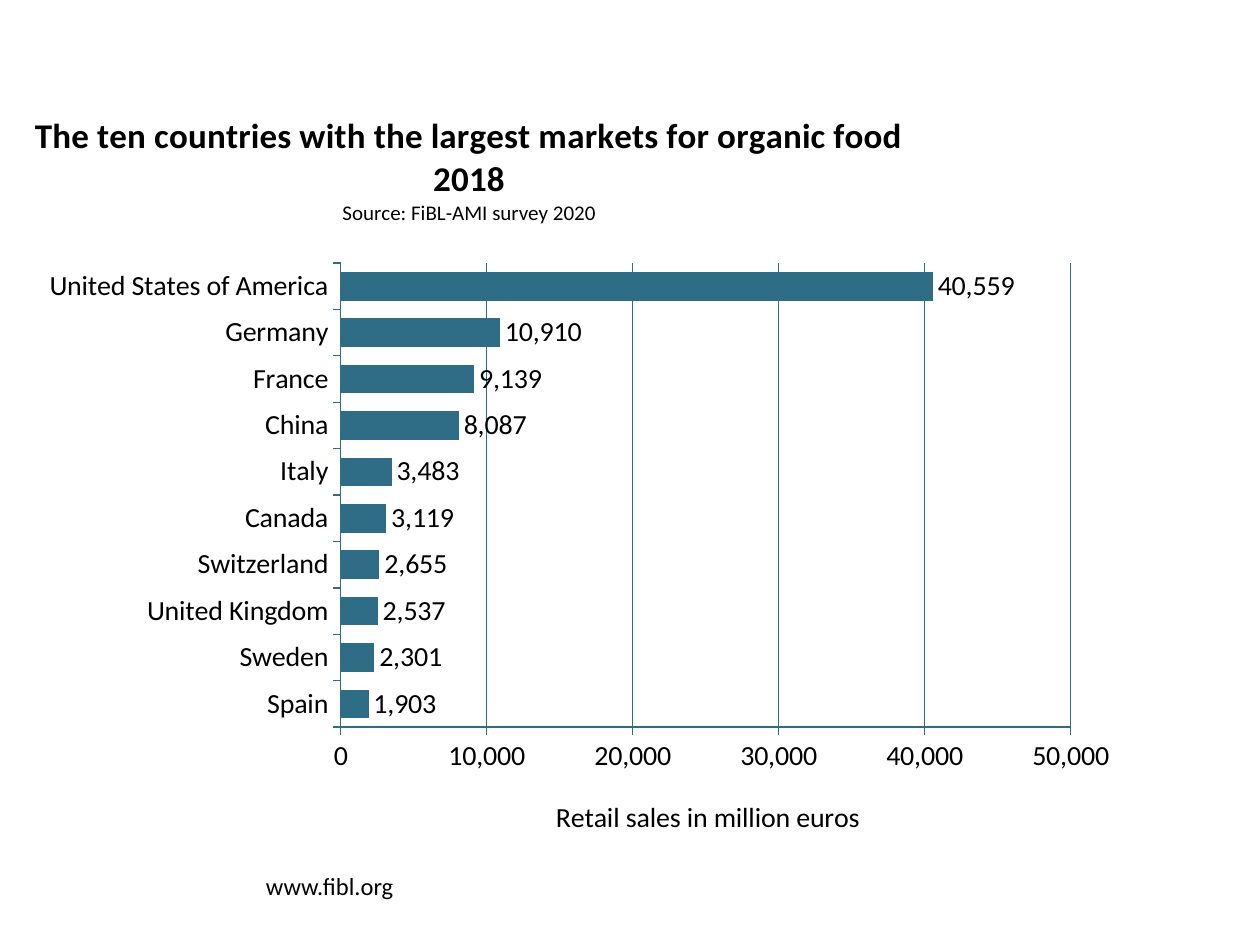
from lxml import etree
from pptx import Presentation
from pptx import util as u
from pptx.chart import data as cd
from pptx.dml.color import RGBColor
from pptx.enum import chart as ce
from pptx.enum import text
from pptx.oxml.ns import qn

COLORS = {"ink": "000000", "bar": "2F6C86", "back": "FFFFFF"}
FACE = "Calibri"
SALES = [
    ("Spain", 1903),
    ("Sweden", 2301),
    ("United Kingdom", 2537),
    ("Switzerland", 2655),
    ("Canada", 3119),
    ("Italy", 3483),
    ("China", 8087),
    ("France", 9139),
    ("Germany", 10910),
    ("United States of America", 40559),
]


def px(n):
    return u.Emu(round(n * 914400 / 126))


def hue(name):
    return RGBColor.from_string(COLORS[name])


def style(font, size, bold=False):
    font.name = FACE
    font.size = u.Pt(size)
    font.bold = bold
    font.color.rgb = hue("ink")


def write(para, words, size, bold=False):
    run = para.add_run()
    run.text = words
    style(run.font, size, bold)


def rule(line):
    line.color.rgb = hue("bar")
    line.width = u.Pt(0.75)


def place(node, spot, **parts):
    for old in node.findall(qn("c:layout")):
        node.remove(old)
    layout = etree.Element(qn("c:layout"))
    manual = etree.SubElement(layout, qn("c:manualLayout"))
    if "w" in parts:
        etree.SubElement(manual, qn("c:layoutTarget")).set("val", "inner")
    for mode in ("xMode", "yMode"):
        etree.SubElement(manual, qn(f"c:{mode}")).set("val", "edge")
    for key, val in parts.items():
        etree.SubElement(manual, qn(f"c:{key}")).set("val", str(val))
    node.insert(spot, layout)


def add_axes(chart):
    for axis in (chart.category_axis, chart.value_axis):
        axis.major_tick_mark = ce.XL_TICK_MARK.OUTSIDE
        axis.minor_tick_mark = ce.XL_TICK_MARK.NONE
        rule(axis.format.line)
        style(axis.tick_labels.font, 16)
    chart.category_axis.has_major_gridlines = False
    axis = chart.value_axis
    axis.minimum_scale, axis.maximum_scale = 0, 50000
    axis.major_unit = 10000
    axis.has_major_gridlines = True
    rule(axis.major_gridlines.format.line)
    axis.tick_labels.number_format = "#,##0"
    axis.tick_labels.number_format_is_linked = False
    title = axis.axis_title
    write(title.text_frame.paragraphs[0], "Retail sales in million euros", 16)
    place(title._element, 1, x=0.48, y=0.94)


def add_title(chart):
    chart.has_title = True
    title = chart.chart_title
    frame = title.text_frame
    write(
        frame.paragraphs[0],
        "The ten countries with the largest markets for organic food 2018",
        20,
        True,
    )
    write(frame.add_paragraph(), "Source: FiBL-AMI survey 2020", 12)
    place(title._element, 1, x=0.01, y=0.01)


def add_bars(slide, x, y, w, h):
    data = cd.CategoryChartData(number_format="#,##0")
    data.categories = [name for name, _ in SALES]
    data.add_series("Series 1", [value for _, value in SALES])
    chart = slide.shapes.add_chart(
        ce.XL_CHART_TYPE.BAR_CLUSTERED, px(x), px(y), px(w), px(h), data
    ).chart
    chart.has_legend = False
    style(chart.font, 16)
    add_title(chart)
    add_axes(chart)

    plot = chart.plots[0]
    plot.gap_width = 62
    plot.vary_by_categories = False
    fill = plot.series[0].format.fill
    fill.solid()
    fill.fore_color.rgb = hue("bar")
    plot.has_data_labels = True
    labels = plot.data_labels
    labels.show_value = True
    labels.position = ce.XL_LABEL_POSITION.OUTSIDE_END
    labels.number_format = "#,##0"
    labels.number_format_is_linked = False
    style(labels.font, 16)
    area = chart._chartSpace.chart.plotArea
    place(area, 0, x=0.29, y=0.22, w=0.66, h=0.63)


def add_foot(slide, x, y, w, h):
    frame = slide.shapes.add_textbox(px(x), px(y), px(w), px(h)).text_frame
    frame.word_wrap = True
    frame.vertical_anchor = text.MSO_ANCHOR.BOTTOM
    frame.margin_left = frame.margin_right = 0
    write(frame.paragraphs[0], "www.fibl.org", 14)


def main():
    deck = Presentation()
    deck.slide_width, deck.slide_height = px(1260), px(945)
    slide = deck.slides.add_slide(deck.slide_layouts[6])
    back = slide.background.fill
    back.solid()
    back.fore_color.rgb = hue("back")
    add_foot(slide, 266, 864, 377, 43)
    add_bars(slide, 20, 101, 1106, 743)
    deck.save("out.pptx")


if __name__ == "__main__":
    main()
